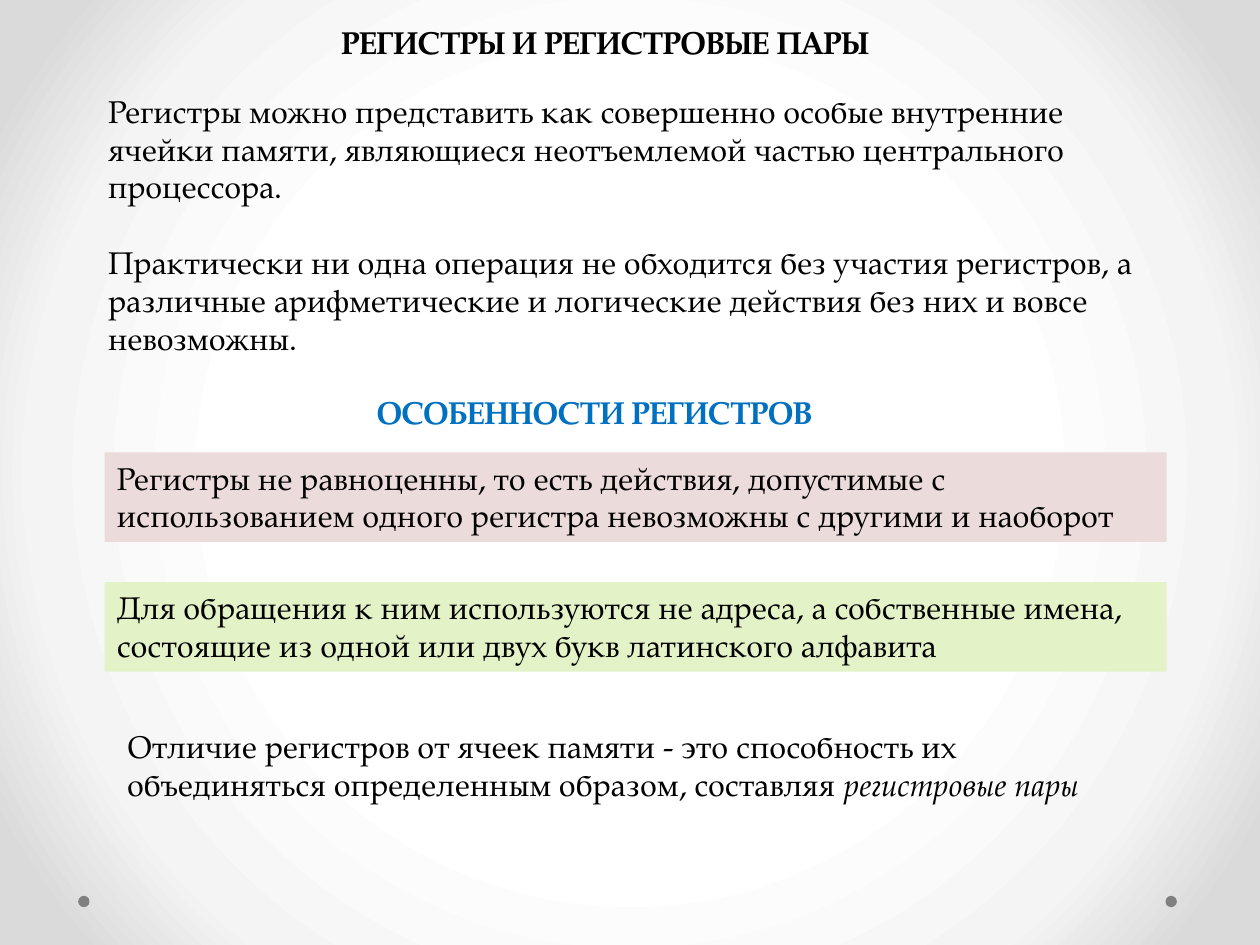
from dataclasses import dataclass

from pptx import Presentation
from pptx.dml.color import RGBColor
from pptx.enum.shapes import MSO_SHAPE as Shape
from pptx.enum.text import MSO_ANCHOR as Anchor, MSO_AUTO_SIZE as AutoSize, PP_ALIGN as Align
from pptx.oxml import parse_xml
from pptx.oxml.ns import nsdecls, qn
from pptx.util import Inches, Pt


@dataclass(frozen=True)
class Theme:
    font: str = "TeX Gyre Pagella"
    size: float = 18
    paragraph_gap: float = 21.7
    ink: str = "000000"
    accent: str = "0070C0"
    dot: str = "808080"
    rose: str = "ECDBDB"
    lime: str = "E3F2C7"
    backdrop: tuple = ((50, "FFFFFF"), (76, "F4F4F4"), (92, "DADADA"))


def write_text(frame, *paragraphs, theme, color=None, bold=False):
    """Each paragraph is a list of (text, italic) runs."""
    frame.word_wrap = True
    frame.auto_size = AutoSize.SHAPE_TO_FIT_TEXT
    frame.vertical_anchor = Anchor.TOP
    for number, runs in enumerate(paragraphs):
        paragraph = frame.add_paragraph() if number else frame.paragraphs[0]
        paragraph.alignment = Align.LEFT
        paragraph.space_before = Pt(theme.paragraph_gap if number else 0)
        for text, italic in runs:
            run = paragraph.add_run()
            run.text = text
            font = run.font
            font.name, font.size = theme.font, Pt(theme.size)
            font.bold, font.italic = bold, italic
            font.color.rgb = RGBColor.from_string(color or theme.ink)


class SlideBuilder:
    def __init__(self, slide, theme):
        self.slide, self.theme = slide, theme

    def background(self):
        self.slide.background.fill.solid()
        properties = self.slide.element.find(".//" + qn("p:bgPr"))
        stops = "".join(
            f'<a:gs pos="{position * 1000}"><a:srgbClr val="{color}"/></a:gs>'
            for position, color in self.theme.backdrop
        )
        gradient = parse_xml(
            f'<a:gradFill {nsdecls("a")} rotWithShape="1"><a:gsLst>{stops}</a:gsLst>'
            '<a:path path="circle"><a:fillToRect l="50000" t="50000" r="50000" b="50000"/>'
            "</a:path></a:gradFill>"
        )
        properties.replace(properties.find(qn("a:solidFill")), gradient)

    def title(self, text, left, top, width, height):
        title = self.slide.shapes.title
        title.left, title.top = Inches(left), Inches(top)
        title.width, title.height = Inches(width), Inches(height)
        write_text(title.text_frame, [(text, False)], theme=self.theme, bold=True)

    def text(self, left, top, width, height, *paragraphs, **style):
        box = self.slide.shapes.add_textbox(*map(Inches, (left, top, width, height)))
        write_text(box.text_frame, *paragraphs, theme=self.theme, **style)

    def filled(self, kind, left, top, width, height, fill):
        shape = self.slide.shapes.add_shape(kind, *map(Inches, (left, top, width, height)))
        shape.shadow.inherit = False
        shape.fill.solid()
        shape.fill.fore_color.rgb = RGBColor.from_string(fill)
        shape.line.fill.background()
        return shape

    def panel(self, top, fill, text):
        panel = self.filled(Shape.RECTANGLE, 0.83, top, 8.43, 0.71, fill)
        write_text(panel.text_frame, [(text, False)], theme=self.theme)


def main():
    theme = Theme()
    deck = Presentation()
    deck.slide_width, deck.slide_height = Inches(10), Inches(7.5)
    page = SlideBuilder(deck.slides.add_slide(deck.slide_layouts[5]), theme)

    # Backdrop with a dot in each lower corner
    page.background()
    for dot_left in (9.25, 0.62):
        page.filled(Shape.OVAL, dot_left, 7.11, 0.09, 0.09, theme.dot)

    # Title and introduction
    page.title("РЕГИСТРЫ И РЕГИСТРОВЫЕ ПАРЫ", 2.61, 0.13, 4.73, 0.4)
    page.text(
        0.76, 0.68, 8.43, 2.22,
        [("Регистры можно представить как совершенно особые внутренние ячейки памяти, "
          "являющиеся неотъемлемой частью центрального процессора.", False)],
        [("Практически ни одна операция не обходится без участия регистров, а различные "
          "арифметические и логические действия без них и вовсе невозможны.", False)],
    )

    # Features of registers
    page.text(2.89, 3.07, 4.3, 0.4, [("ОСОБЕННОСТИ РЕГИСТРОВ", False)],
              color=theme.accent, bold=True)
    page.panel(3.59, theme.rose,
               "Регистры не равноценны, то есть действия, допустимые с использованием "
               "одного регистра невозможны с другими и наоборот")
    page.panel(4.62, theme.lime,
               "Для обращения к ним используются не адреса, а собственные имена, "
               "состоящие из одной или двух букв латинского алфавита")

    # Closing remark
    page.text(
        0.91, 5.72, 8.11, 0.71,
        [("Отличие регистров от ячеек памяти - это способность их объединяться "
          "определенным образом, составляя ", False),
         ("регистровые пары", True)],
    )

    deck.save("out.pptx")


if __name__ == "__main__":
    main()
